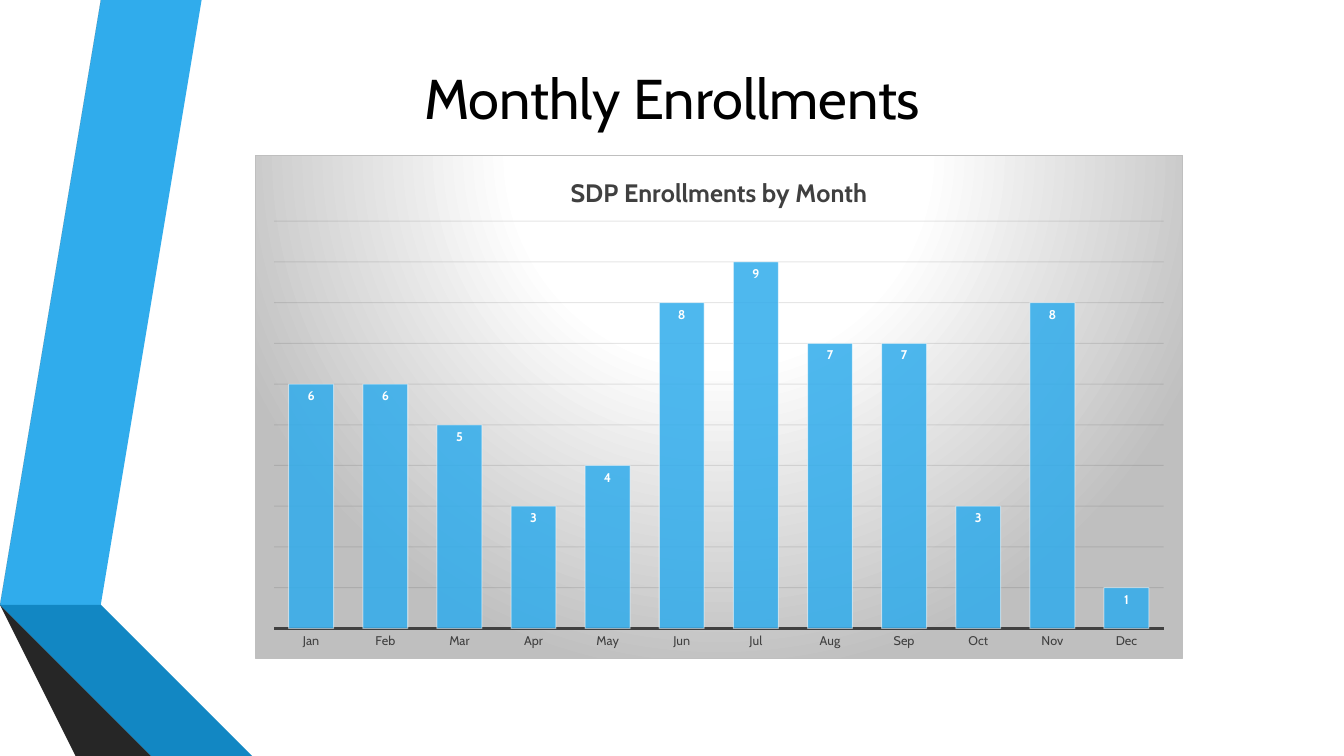
import pptx
import pptx.chart.data
import pptx.dml.color
import pptx.enum.chart
import pptx.enum.text
import pptx.oxml
import pptx.oxml.ns
import pptx.util
from pptx.util import Inches

FONT = "Cabin"
COLORS = {
    "white": "FFFFFF",
    "black": "000000",
    "sky": "30ACEC",
    "blue": "1287C3",
    "navy": "0C5A82",
    "gray": "595959",
    "charcoal": "404040",
    "shadow": "262626",
    "silver": "BFBFBF",
    "grid": "0D0D0D",
}
# Ribbon pieces from back to front: colour and corners in inches
RIBBONS = [
    ("sky", [(0.5, 5.78), (0.77, 5.83), (1.73, 0), (1.45, 0)]),
    ("gray", [(1.39, 0), (1.11, 0), (0.16, 5.73), (0.44, 5.77)]),
    ("shadow", [(0.16, 5.73), (1.45, 7.5), (1.51, 7.5)]),
    ("navy", [(0.5, 5.79), (2.08, 7.5), (2.14, 7.5)]),
    ("blue", [(0.5, 5.78), (2.14, 7.5), (2.83, 7.5), (0.77, 5.83)]),
    ("charcoal", [(2.02, 7.5), (0.48, 5.83), (0.44, 5.77), (0.16, 5.73), (1.51, 7.5)]),
]
ENROLLMENTS = {
    "Jan": 6, "Feb": 6, "Mar": 5, "Apr": 3, "May": 4, "Jun": 8,
    "Jul": 9, "Aug": 7, "Sep": 7, "Oct": 3, "Nov": 8, "Dec": 1,
}


def rgb(name):
    return pptx.dml.color.RGBColor.from_string(COLORS[name])


def style_font(font, size, color, bold=False):
    font.name = FONT
    font.size = pptx.util.Pt(size)
    font.bold = bold
    font.color.rgb = rgb(color)


def style_line(line, color, width):
    line.color.rgb = rgb(color)
    line.width = pptx.util.Pt(width)


def set_opacity(chart, query, percent):
    """Set the opacity of every RGB colour that the XPath query finds."""
    for color in chart.element.xpath(query):
        alpha = pptx.oxml.parse_xml(
            f'<a:alpha {pptx.oxml.ns.nsdecls("a")} val="{percent * 1000}"/>')
        color.append(alpha)


def add_ribbon(slide, color, corners):
    builder = slide.shapes.build_freeform(*corners[0], scale=Inches(1))
    builder.add_line_segments(corners[1:], close=True)
    shape = builder.convert_to_shape()
    shape.shadow.inherit = False
    shape.fill.solid()
    shape.fill.fore_color.rgb = rgb(color)
    shape.line.fill.background()


def add_title(slide, text):
    box = slide.shapes.add_textbox(Inches(0.92), Inches(0.37), Inches(11.49), Inches(1.18))
    frame = box.text_frame
    frame.word_wrap = True
    frame.vertical_anchor = pptx.enum.text.MSO_ANCHOR.MIDDLE
    paragraph = frame.paragraphs[0]
    paragraph.text = text
    paragraph.alignment = pptx.enum.text.PP_ALIGN.CENTER
    style_font(paragraph.font, 40, "black")


def fill_chart_area(chart):
    """Give the chart a radial gradient and a thin border."""
    stops = "".join(
        f'<a:gs pos="{position * 1000}"><a:srgbClr val="{COLORS[color]}"/></a:gs>'
        for position, color in [(0, "white"), (39, "white"), (100, "silver")])
    area = pptx.oxml.parse_xml(
        f'<c:spPr {pptx.oxml.ns.nsdecls("c", "a")}>'
        f'<a:gradFill><a:gsLst>{stops}</a:gsLst><a:path path="circle">'
        '<a:fillToRect l="50000" t="-80000" r="50000" b="180000"/></a:path></a:gradFill>'
        f'<a:ln w="{pptx.util.Pt(0.75)}"><a:solidFill>'
        f'<a:srgbClr val="{COLORS["silver"]}"/></a:solidFill></a:ln></c:spPr>')
    chart.element.xpath("c:chart")[0].addnext(area)


def place_plot(chart, **fractions):
    """Fix the inner plot area as fractions (x, y, w, h) of the chart."""
    values = "".join(f'<c:{key} val="{value}"/>' for key, value in fractions.items())
    layout = pptx.oxml.parse_xml(
        f'<c:layout {pptx.oxml.ns.nsdecls("c")}><c:manualLayout>'
        '<c:layoutTarget val="inner"/><c:xMode val="edge"/><c:yMode val="edge"/>'
        f'{values}</c:manualLayout></c:layout>')
    chart.element.xpath("c:chart/c:plotArea")[0].insert(0, layout)


def style_axes(chart):
    months = chart.category_axis
    months.major_tick_mark = pptx.enum.chart.XL_TICK_MARK.NONE
    style_font(months.tick_labels.font, 9, "charcoal")
    style_line(months.format.line, "charcoal", 1.5)
    counts = chart.value_axis
    counts.visible = False
    counts.minimum_scale, counts.maximum_scale, counts.major_unit = 0, 10, 1
    counts.has_major_gridlines = True
    style_line(counts.major_gridlines.format.line, "grid", 0.75)
    set_opacity(chart, ".//c:majorGridlines//a:srgbClr", 10)


def style_columns(chart):
    plot = chart.plots[0]
    plot.gap_width = 65
    plot.vary_by_categories = False
    series = plot.series[0]
    series.format.fill.solid()
    series.format.fill.fore_color.rgb = rgb("sky")
    style_line(series.format.line, "white", 0.75)
    set_opacity(chart, ".//c:ser/c:spPr/a:solidFill/a:srgbClr", 85)
    set_opacity(chart, ".//c:ser/c:spPr/a:ln//a:srgbClr", 50)
    labels = series.data_labels
    labels.show_value = True
    labels.position = pptx.enum.chart.XL_LABEL_POSITION.INSIDE_END
    style_font(labels.font, 9, "white", bold=True)


def add_enrollment_chart(slide, title):
    data = pptx.chart.data.CategoryChartData()
    data.categories = list(ENROLLMENTS)
    data.add_series("Series 1", list(ENROLLMENTS.values()))
    chart = slide.shapes.add_chart(
        pptx.enum.chart.XL_CHART_TYPE.COLUMN_CLUSTERED,
        Inches(2.53), Inches(1.54), Inches(9.2), Inches(5), data).chart
    style_font(chart.font, 10, "black")
    chart.has_legend = False
    chart.has_title = True
    paragraph = chart.chart_title.text_frame.paragraphs[0]
    paragraph.text = title
    style_font(paragraph.font, 18, "charcoal", bold=True)
    chart.chart_title.include_in_layout = False
    style_axes(chart)
    style_columns(chart)
    fill_chart_area(chart)
    place_plot(chart, x=0.02, y=0.13, w=0.96, h=0.81)


def main():
    presentation = pptx.Presentation()
    presentation.slide_width = Inches(13.33)
    presentation.slide_height = Inches(7.5)
    slide = presentation.slides.add_slide(presentation.slide_layouts[6])
    for color, corners in RIBBONS:
        add_ribbon(slide, color, corners)
    add_title(slide, "Monthly Enrollments")
    add_enrollment_chart(slide, "SDP Enrollments by Month")
    presentation.save("out.pptx")


if __name__ == "__main__":
    main()
